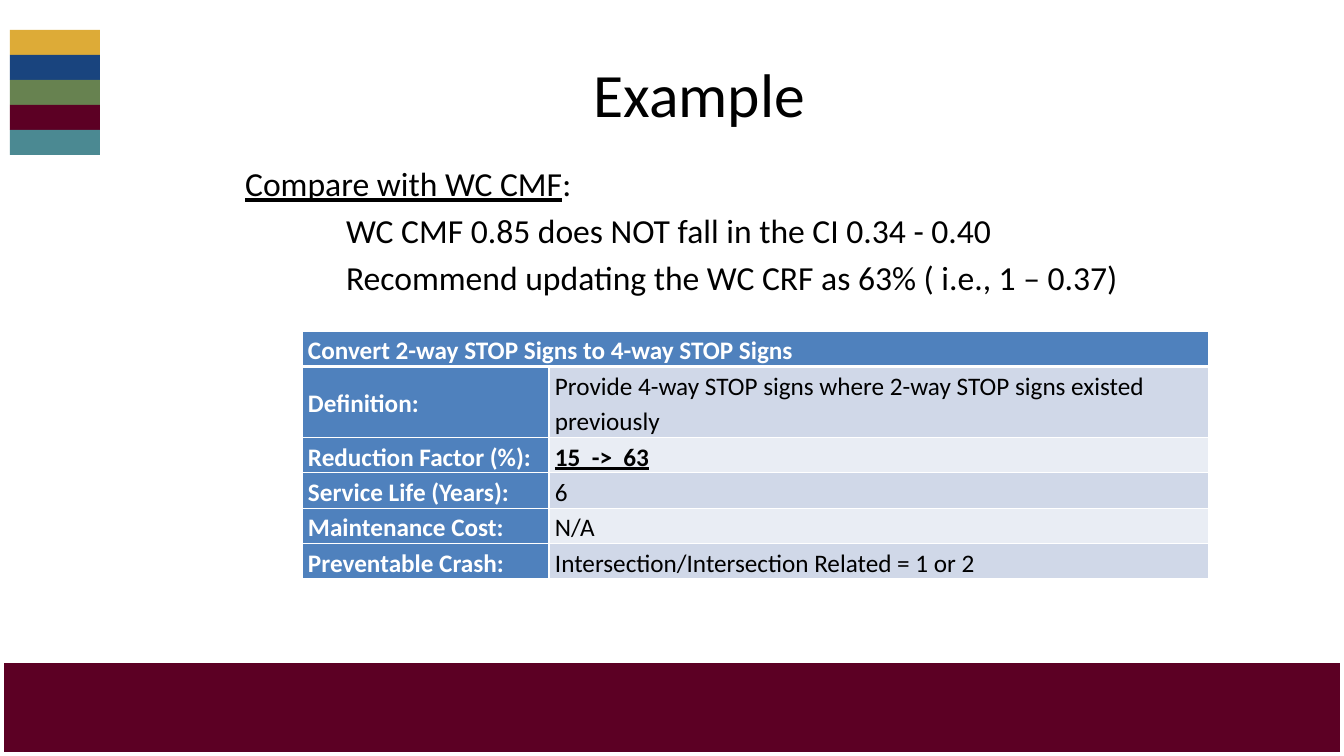
from lxml import etree
from pptx import Presentation
from pptx import util as u
from pptx.dml.color import RGBColor
from pptx.enum import shapes, text
from pptx.oxml.ns import qn

# Content
HEADING = "Example"
COMPARISON = ("Compare with WC CMF", ":")
FINDINGS = [
    "WC CMF 0.85 does NOT fall in the CI 0.34 - 0.40",
    "Recommend updating the WC CRF as 63% ( i.e., 1 – 0.37)",
]
COUNTERMEASURE = "Convert 2-way STOP Signs to 4-way STOP Signs"
REVISED_FACTOR = "15  ->  63"
DETAILS = [
    ("Definition:", "Provide 4-way STOP signs where 2-way STOP signs existed previously"),
    ("Reduction Factor (%):", REVISED_FACTOR),
    ("Service Life (Years):", "6"),
    ("Maintenance Cost:", "N/A"),
    ("Preventable Crash:", "Intersection/Intersection Related = 1 or 2"),
]
COLORS = {
    "gold": "DDAB37", "navy": "19447E", "green": "678250", "maroon": "5C0024",
    "teal": "4B8992", "white": "FFFFFF", "black": "000000",
    "label": "4F81BD", "band_dark": "D0D8E8", "band_light": "E9EDF4",
}
STRIPES = ["gold", "navy", "green", "maroon", "teal"]
FONT = "Calibri"

# Layout in px
WIDTH, HEIGHT = 1344, 756
STRIPE_LEFT, STRIPE_TOP, STRIPE_WIDTH, STRIPE_HEIGHT = 10, 30, 90, 25
COLUMN_WIDTHS = [247, 660]
ROW_HEIGHTS = [35, 71, 35, 35, 35, 35]
FINDING_INDENT = 101


def px(n):
    return u.Emu(round(n * 914400 / 100.8))


def box(left, top, width, height):
    return px(left), px(top), px(width), px(height)


def rgb(name):
    return RGBColor.from_string(COLORS[name])


def style(font, size, color="black", bold=False):
    font.name, font.size, font.bold = FONT, u.Pt(size), bold
    font.color.rgb = rgb(color)


def place(placeholder, *bounds):
    (placeholder.left, placeholder.top,
     placeholder.width, placeholder.height) = box(*bounds)
    placeholder.text_frame.auto_size = text.MSO_AUTO_SIZE.NONE
    return placeholder.text_frame


def add_block(bounds, color):
    block = slide.shapes.add_shape(shapes.MSO_SHAPE.RECTANGLE, *box(*bounds))
    block.shadow.inherit = False
    block.fill.solid()
    block.fill.fore_color.rgb = rgb(color)
    block.line.fill.background()


def set_borders(cell, **points):
    properties = cell._tc.get_or_add_tcPr()
    for position, side in enumerate("LRTB"):
        line = etree.Element(qn(f"a:ln{side}"), w=str(u.Pt(points.get(side, 1))))
        fill = etree.SubElement(line, qn("a:solidFill"))
        etree.SubElement(fill, qn("a:srgbClr"), val=COLORS["white"])
        properties.insert(position, line)


def fill_cell(cell, words, fill, color, bold):
    cell.fill.solid()
    cell.fill.fore_color.rgb = rgb(fill)
    cell.vertical_anchor = text.MSO_ANCHOR.MIDDLE
    cell.margin_left = cell.margin_right = px(6)
    cell.margin_top = cell.margin_bottom = 0
    paragraph = cell.text_frame.paragraphs[0]
    paragraph.text = words
    paragraph.line_spacing = 1.15
    style(paragraph.font, 18, color, bold)
    paragraph.font.underline = words == REVISED_FACTOR


prs = Presentation()
prs.slide_width, prs.slide_height = px(WIDTH), px(HEIGHT)
slide = prs.slides.add_slide(prs.slide_layouts[1])

# Bottom bar, stripes and white frame
add_block((0, 663, WIDTH, 91), "maroon")
for i, stripe in enumerate(STRIPES):
    add_block((STRIPE_LEFT, STRIPE_TOP + i * STRIPE_HEIGHT, STRIPE_WIDTH, STRIPE_HEIGHT), stripe)
frame = slide.shapes.add_shape(shapes.MSO_SHAPE.RECTANGLE, *box(0, 0, WIDTH, HEIGHT))
frame.shadow.inherit = False
frame.fill.background()
frame.line.color.rgb = rgb("white")
frame.line.width = u.Pt(6)

# Title
title = place(slide.shapes.title, 123, 30, 1153, 126)
title.text = HEADING
title.vertical_anchor = text.MSO_ANCHOR.MIDDLE
title.paragraphs[0].alignment = text.PP_ALIGN.CENTER
style(title.paragraphs[0].font, 44)

# Comparison and findings
body = place(slide.placeholders[1], 235, 158, 907, 387)
body.text = "\n".join(["", *FINDINGS])
for part in COMPARISON:
    body.paragraphs[0].add_run().text = part
body.paragraphs[0].runs[0].font.underline = True
for i, paragraph in enumerate(body.paragraphs):
    properties = paragraph._p.get_or_add_pPr()
    properties.set("marL", str(px(FINDING_INDENT) if i else 0))
    properties.set("indent", "0")
    etree.SubElement(properties, qn("a:buNone"))
    paragraph.space_before = u.Pt(4.8 if i else 0)
    style(paragraph.font, 24)

# Countermeasure table
table = slide.shapes.add_table(
    len(ROW_HEIGHTS), len(COLUMN_WIDTHS),
    *box(302, 331, sum(COLUMN_WIDTHS), sum(ROW_HEIGHTS))).table
for column, width in zip(table.columns, COLUMN_WIDTHS):
    column.width = px(width)
for row, height in zip(table.rows, ROW_HEIGHTS):
    row.height = px(height)

table.cell(0, 0).merge(table.cell(0, 1))
fill_cell(table.cell(0, 0), COUNTERMEASURE, "label", "white", True)
for r, (label, value) in enumerate(DETAILS, start=1):
    fill_cell(table.cell(r, 0), label, "label", "white", True)
    fill_cell(table.cell(r, 1), value, "band_dark" if r % 2 else "band_light",
              "black", value == REVISED_FACTOR)
for r in range(len(ROW_HEIGHTS)):
    for c in range(len(COLUMN_WIDTHS)):
        set_borders(table.cell(r, c), T=3 if r == 1 else 1, B=3 if r == 0 else 1)

prs.save("out.pptx")
